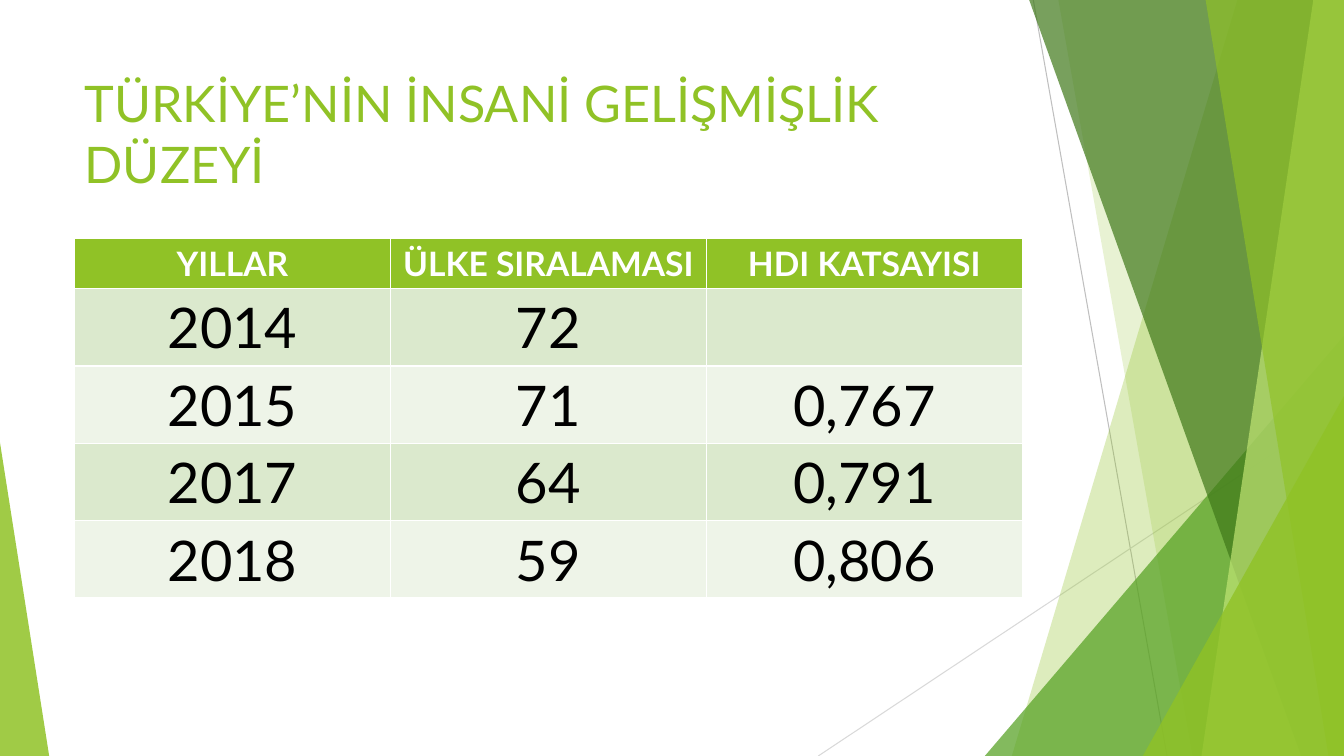
from lxml.etree import SubElement
from pptx import Presentation
from pptx.dml.color import RGBColor
from pptx.enum.shapes import MSO_CONNECTOR, MSO_SHAPE
from pptx.enum.text import MSO_ANCHOR, MSO_AUTO_SIZE, PP_ALIGN
from pptx.oxml.ns import qn
from pptx.util import Cm, Pt

COLORS = {
    "green": "90C226", "leaf": "54A021", "forest": "3F7819", "lime": "C0E474",
    "band_dark": "DBE9CD", "band_light": "EEF4E8", "white": "FFFFFF",
    "black": "000000", "gray": "BFBFBF", "pale_gray": "D9D9D9",
}
WIDTH, HEIGHT = 33.87, 19.05


def write(tf, text, size, color, bold=False, align=PP_ALIGN.LEFT):
    p = tf.paragraphs[0]
    p.alignment = align
    r = p.add_run()
    r.text = text
    r.font.name = "Lato"
    r.font.size = Pt(size)
    r.font.bold = bold
    r.font.color.rgb = RGBColor.from_string(COLORS[color])


def paint(sp, color, opacity):
    sp.shadow.inherit = False
    sp.line.fill.background()
    sp.fill.solid()
    sp.fill.fore_color.rgb = RGBColor.from_string(COLORS[color])
    clr = sp.fill._xPr.find(qn("a:solidFill"))[0]
    SubElement(clr, qn("a:alpha")).set("val", str(opacity * 1000))


prs = Presentation()
prs.slide_width, prs.slide_height = Cm(WIDTH), Cm(HEIGHT)
s = prs.slides.add_slide(prs.slide_layouts[5])

rays = [
    (26.04, 0, 29.41, HEIGHT, "gray"),
    (WIDTH, 10.24, 20.62, HEIGHT, "pale_gray"),
]
for x1, y1, x2, y2, color in rays:
    line = s.shapes.add_connector(MSO_CONNECTOR.STRAIGHT, Cm(x1), Cm(y1), Cm(x2), Cm(y2))
    line.line.width = Pt(0.75)
    line.line.color.rgb = RGBColor.from_string(COLORS[color])
    SubElement(line._element.spPr, qn("a:effectLst"))

facets = [
    ("panel", (31.19, 25.5), "green", 30),
    ("panel", (26.67, 30.05), "green", 20),
    ("triangle", (24.82, 9.05, 10.59, 1), "leaf", 72),
    ("panel", (25.93, 32.79), "forest", 70),
    ("panel", (33.1, 30.28), "lime", 70),
    ("panel", (30.38, 33.48), "green", 65),
    ("triangle", (28.8, 5.07, 9.07, 1), "green", 80),
    ("triangle", (0, 1.24, 7.9, 0), "green", 85),
]
for kind, shape, color, opacity in facets:
    if kind == "panel":
        top_x, bottom_x = shape
        fb = s.shapes.build_freeform(Cm(top_x), Cm(-0.02))
        corners = [(WIDTH, -0.02), (WIDTH, HEIGHT), (bottom_x, HEIGHT)]
        fb.add_line_segments([(Cm(x), Cm(y)) for x, y in corners], close=True)
        sp = fb.convert_to_shape()
    else:
        left, width, height, apex = shape
        sp = s.shapes.add_shape(MSO_SHAPE.ISOSCELES_TRIANGLE, Cm(left), Cm(HEIGHT - height),
                                Cm(width), Cm(height))
        sp.adjustments[0] = apex
    paint(sp, color, opacity)

title = s.shapes.title
title.left, title.top, title.width, title.height = Cm(1.88), Cm(1.7), Cm(23.88), Cm(1.98)
tf = title.text_frame
tf.word_wrap = True
tf.auto_size = MSO_AUTO_SIZE.NONE
tf.vertical_anchor = MSO_ANCHOR.TOP
write(tf, "TÜRKİYE’NİN İNSANİ GELİŞMİŞLİK DÜZEYİ", 36, "green")

rows = [
    ("YILLAR", "ÜLKE SIRALAMASI", "HDI KATSAYISI"),
    ("2014", "72", ""),
    ("2015", "71", "0,767"),
    ("2017", "64", "0,791"),
    ("2018", "59", "0,806"),
]
table = s.shapes.add_table(len(rows), 3, Cm(1.88), Cm(6), Cm(23.88), Cm(9.07)).table
for i, row in enumerate(rows):
    header = i == 0
    table.rows[i].height = Cm(1.27 if header else 1.95)
    fill = "green" if header else "band_dark" if i % 2 else "band_light"
    for j, text in enumerate(row):
        cell = table.cell(i, j)
        cell.fill.solid()
        cell.fill.fore_color.rgb = RGBColor.from_string(COLORS[fill])
        if text:
            write(cell.text_frame, text, 24 if header else 40, "white" if header else "black",
                  bold=header, align=PP_ALIGN.CENTER)

prs.save("out.pptx")
